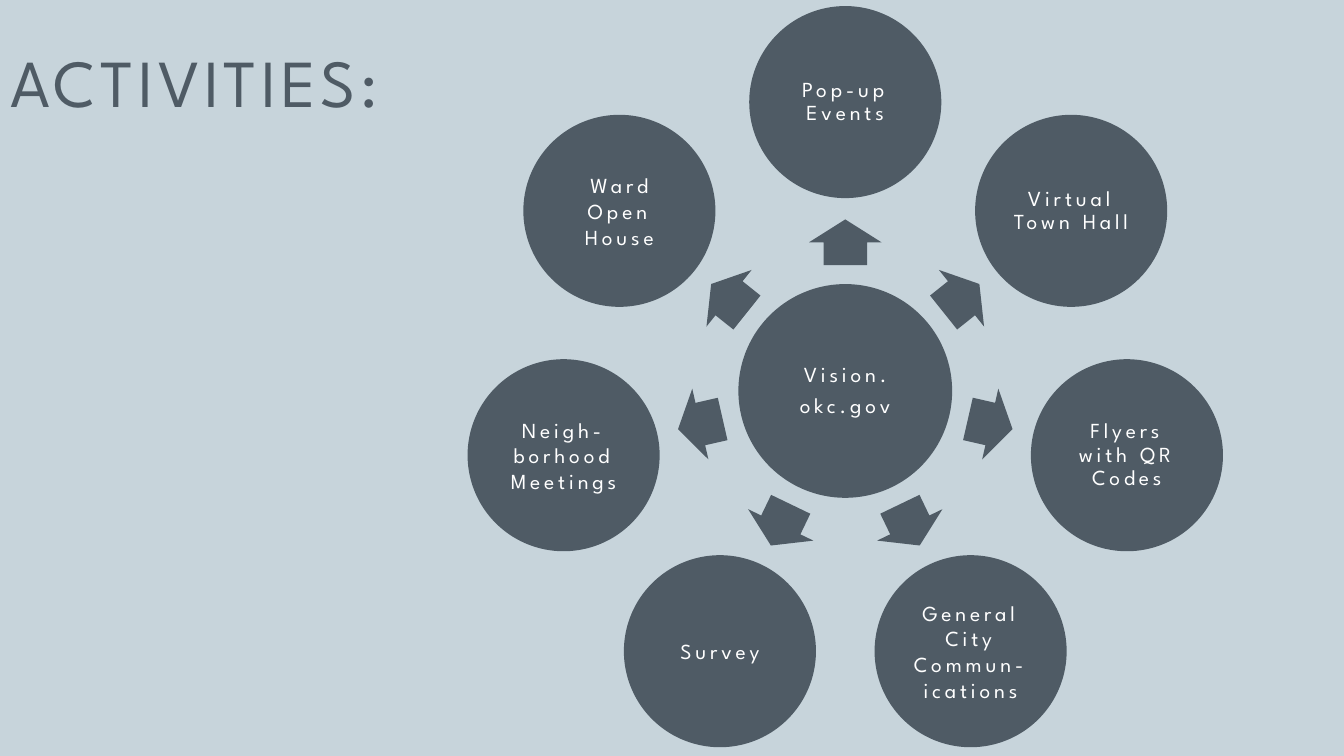
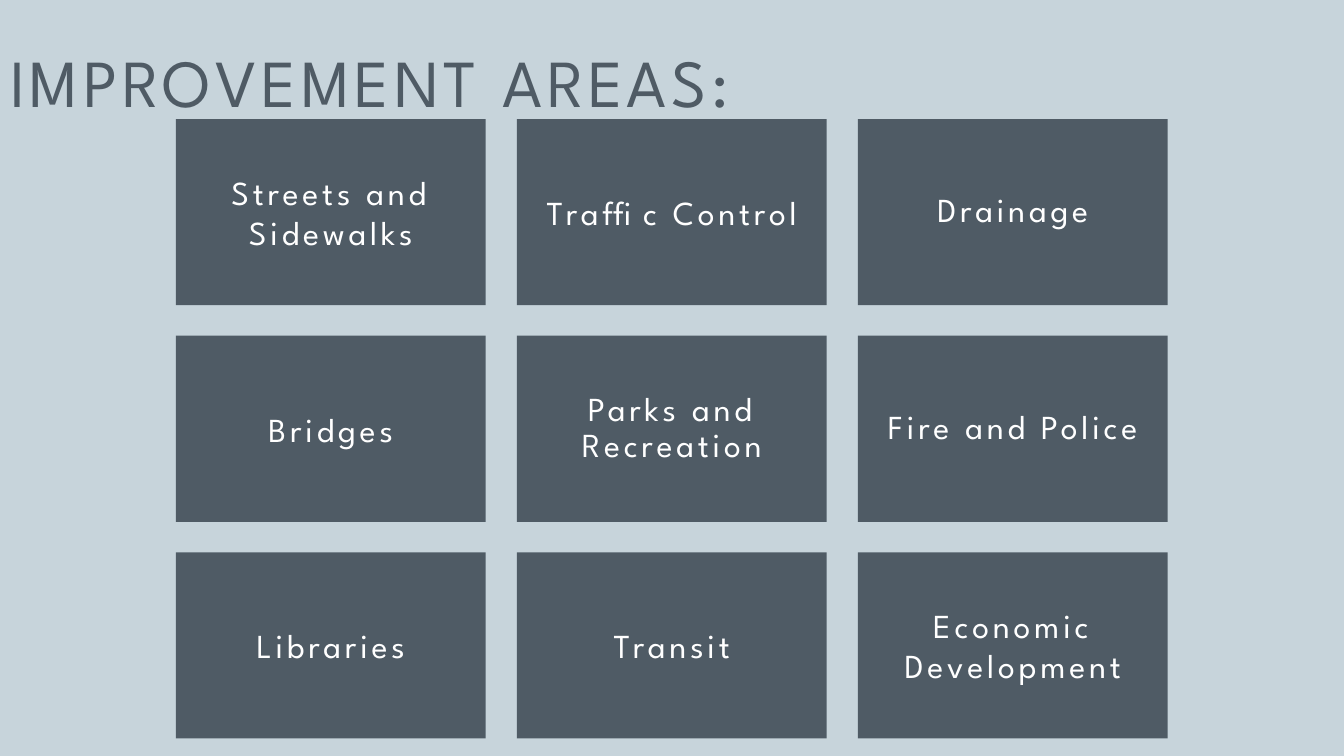
import math

import pptx
import pptx.dml.color
import pptx.enum.shapes
import pptx.enum.text
import pptx.util

Cm = pptx.util.Cm
Pt = pptx.util.Pt
RGBColor = pptx.dml.color.RGBColor
KIND = pptx.enum.shapes.MSO_SHAPE
ALIGN = pptx.enum.text.PP_ALIGN
ANCHOR = pptx.enum.text.MSO_ANCHOR

PALE = RGBColor(0xC7, 0xD4, 0xDB)
SLATE = RGBColor(0x4F, 0x5B, 0x65)
WHITE = RGBColor(0xFF, 0xFF, 0xFF)
FONT = "League Spartan"

HUB = "Vision.\nokc.gov"
EVENTS = [
    ("Pop-up Events", True),
    ("Virtual Town Hall", True),
    ("Flyers with QR Codes", True),
    ("General City Commun-ications", False),
    ("Survey", False),
    ("Neigh-borhood Meetings", False),
    ("Ward\nOpen House", False),
]
AREAS = [
    [("Streets and Sidewalks", False), ("Traffic Control", False), ("Drainage", True)],
    [("Bridges", False), ("Parks and Recreation", True), ("Fire and Police", True)],
    [("Libraries", False), ("Transit", False), ("Economic Development", False)],
]

MID_X, MID_Y = 31.95, 14.78
HUB_SIZE, DISC = 8.08, 7.26
ARROW_W, ARROW_H = 1.73, 2.74
ORBIT, ARROW_ORBIT = 10.92, 5.62

GRID_X, GRID_Y = 6.65, 4.5
TILE_W, TILE_H = 11.71, 7.04
STEP_X, STEP_Y = 12.89, 8.19


def write(shape, text, size, color=WHITE, align=ALIGN.CENTER, anchor=ANCHOR.MIDDLE,
          inset=0.0, track=4.1, line=None, after=0.0):
    frame = shape.text_frame
    frame.word_wrap = True
    frame.vertical_anchor = anchor
    frame.margin_left = frame.margin_right = Cm(inset)
    frame.margin_top = frame.margin_bottom = Cm(inset)
    for num, words in enumerate(text.split("\n")):
        para = frame.add_paragraph() if num else frame.paragraphs[0]
        para.alignment = align
        para.line_spacing = line
        para.space_after = Pt(after)
        run = para.add_run()
        run.text = words
        run.font.name = FONT
        run.font.size = Pt(size)
        run.font.color.rgb = color
        run.font._element.set("spc", str(round(track * 100)))


def draw(slide, kind, left, top, width, height):
    shape = slide.shapes.add_shape(kind, Cm(left), Cm(top), Cm(width), Cm(height))
    shape.shadow.inherit = False
    shape.fill.solid()
    shape.fill.fore_color.rgb = SLATE
    shape.line.fill.background()
    return shape


def label(shape, text, size, inset, tight):
    write(shape, text, size, inset=inset, line=0.9 if tight else None,
          after=0.35 * size if tight else 0)


def polar(turn, reach):
    angle = math.radians(turn)
    return MID_X + reach * math.cos(angle), MID_Y + reach * math.sin(angle)


def center(slide, kind, mid, width, height):
    return draw(slide, kind, mid[0] - width / 2, mid[1] - height / 2, width, height)


def start(deck):
    slide = deck.slides.add_slide(deck.slide_layouts[6])
    slide.background.fill.solid()
    slide.background.fill.fore_color.rgb = PALE
    return slide


def title(slide, text):
    box = slide.shapes.add_textbox(Cm(0.38), Cm(0.53), Cm(41.76), Cm(3.81))
    write(box, text, 72, color=SLATE, align=ALIGN.LEFT, anchor=ANCHOR.TOP,
          track=4.9, line=Pt(114.5))


def wheel(deck):
    slide = start(deck)
    hub = center(slide, KIND.OVAL, (MID_X, MID_Y), HUB_SIZE, HUB_SIZE)
    label(hub, HUB, 23, 0.08, True)
    for num, (text, tight) in enumerate(EVENTS):
        turn = 360 * num / len(EVENTS) - 90
        arrow = center(slide, KIND.RIGHT_ARROW, polar(turn, ARROW_ORBIT), ARROW_W, ARROW_H)
        arrow.adjustments[0] = 0.6
        arrow.adjustments[1] = 0.5
        arrow.rotation = turn % 360
        disc = center(slide, KIND.OVAL, polar(turn, ORBIT), DISC, DISC)
        label(disc, text, 23, 0.08, tight)
    title(slide, "ACTIVITIES:")


def grid(deck):
    slide = start(deck)
    for row, tiles in enumerate(AREAS):
        for col, (text, tight) in enumerate(tiles):
            tile = draw(slide, KIND.RECTANGLE, GRID_X + col * STEP_X,
                        GRID_Y + row * STEP_Y, TILE_W, TILE_H)
            label(tile, text, 36, 0.38, tight)
    title(slide, "IMPROVEMENT AREAS:")


def main():
    deck = pptx.Presentation()
    deck.slide_width = Cm(50.8)
    deck.slide_height = Cm(28.58)
    wheel(deck)
    grid(deck)
    deck.save("out.pptx")


if __name__ == "__main__":
    main()
